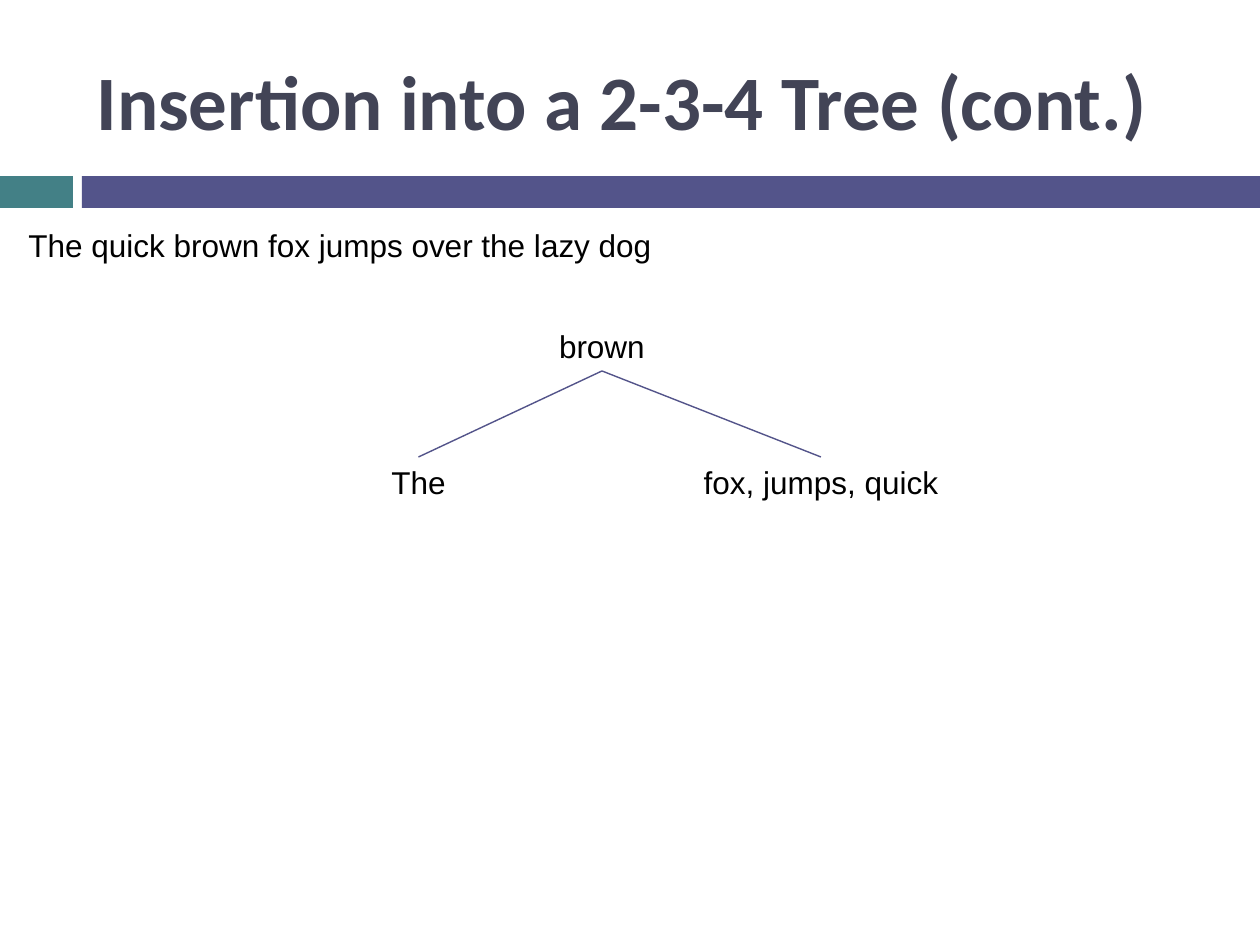
from pptx import Presentation
from pptx.dml.color import RGBColor
from pptx.enum.shapes import MSO_CONNECTOR, MSO_SHAPE
from pptx.enum.text import MSO_ANCHOR, MSO_AUTO_SIZE, PP_ALIGN
from pptx.oxml.ns import qn
from pptx.util import Emu, Pt
from lxml import etree

RECTANGLE = MSO_SHAPE.RECTANGLE
STRAIGHT = MSO_CONNECTOR.STRAIGHT
MIDDLE = MSO_ANCHOR.MIDDLE
GROW = MSO_AUTO_SIZE.SHAPE_TO_FIT_TEXT
NO_FIT = MSO_AUTO_SIZE.NONE
LEFT, CENTER = PP_ALIGN.LEFT, PP_ALIGN.CENTER
BOTTOM_SITE, TOP_SITE = 2, 0

PX = 914400 // 126
PURPLE, TEAL = "53548A", "438086"


def color(value):
    return RGBColor.from_string(value)


def write(shape, text, alignment, text_color, font_format):
    paragraph = shape.text_frame.paragraphs[0]
    paragraph.alignment = alignment
    run = paragraph.add_run()
    run.text = text
    for name, value in font_format.items():
        setattr(run.font, name, value)
    run.font.color.rgb = color(text_color)


presentation = Presentation()
presentation.slide_width = Emu(1260 * PX)
presentation.slide_height = Emu(945 * PX)
slide = presentation.slides.add_slide(presentation.slide_layouts[5])

# Two-part bar under the title
for left, width, fill in [(0, 73, TEAL), (82, 1178, PURPLE)]:
    bar = slide.shapes.add_shape(RECTANGLE, left * PX, 176 * PX, width * PX, 32 * PX)
    bar.shadow.inherit = False
    bar.fill.solid()
    bar.fill.fore_color.rgb = color(fill)
    bar.line.fill.background()

# Title
title = slide.shapes.title
title_place = {"left": 84, "top": 32, "width": 1124, "height": 136}
for name, value in title_place.items():
    setattr(title, name, Emu(value * PX))
title.text_frame.vertical_anchor = MIDDLE
title.text_frame.auto_size = NO_FIT
write(title, "Insertion into a 2-3-4 Tree (cont.)", LEFT, "424456",
      {"name": "Calibri", "size": Pt(44), "bold": True})

# Sentence and tree nodes: text, left, top, width, alignment
labels = [
    ("The quick brown fox jumps over the lazy dog", 16, 220, 654, LEFT),
    ("brown", 546, 321, 112, CENTER),
    ("The", 378, 457, 81, CENTER),
    ("fox, jumps, quick", 690, 457, 262, CENTER),
]
boxes = []
for text, left, top, width, alignment in labels:
    box = slide.shapes.add_textbox(left * PX, top * PX, width * PX, 50 * PX)
    box.text_frame.word_wrap = False
    box.text_frame.auto_size = GROW
    write(box, text, alignment, "000000", {"name": "Arial", "size": Pt(18)})
    boxes.append(box)

# Branches from the root to its children
sentence, root, *children = boxes
for child in children:
    branch = slide.shapes.add_connector(STRAIGHT, 0, 0, 0, 0)
    branch.begin_connect(root, BOTTOM_SITE)
    branch.end_connect(child, TOP_SITE)
    branch.line.color.rgb = color(PURPLE)
    branch.line.width = Pt(0.79)
    etree.SubElement(branch.element.spPr, qn("a:effectLst"))

presentation.save("out.pptx")
